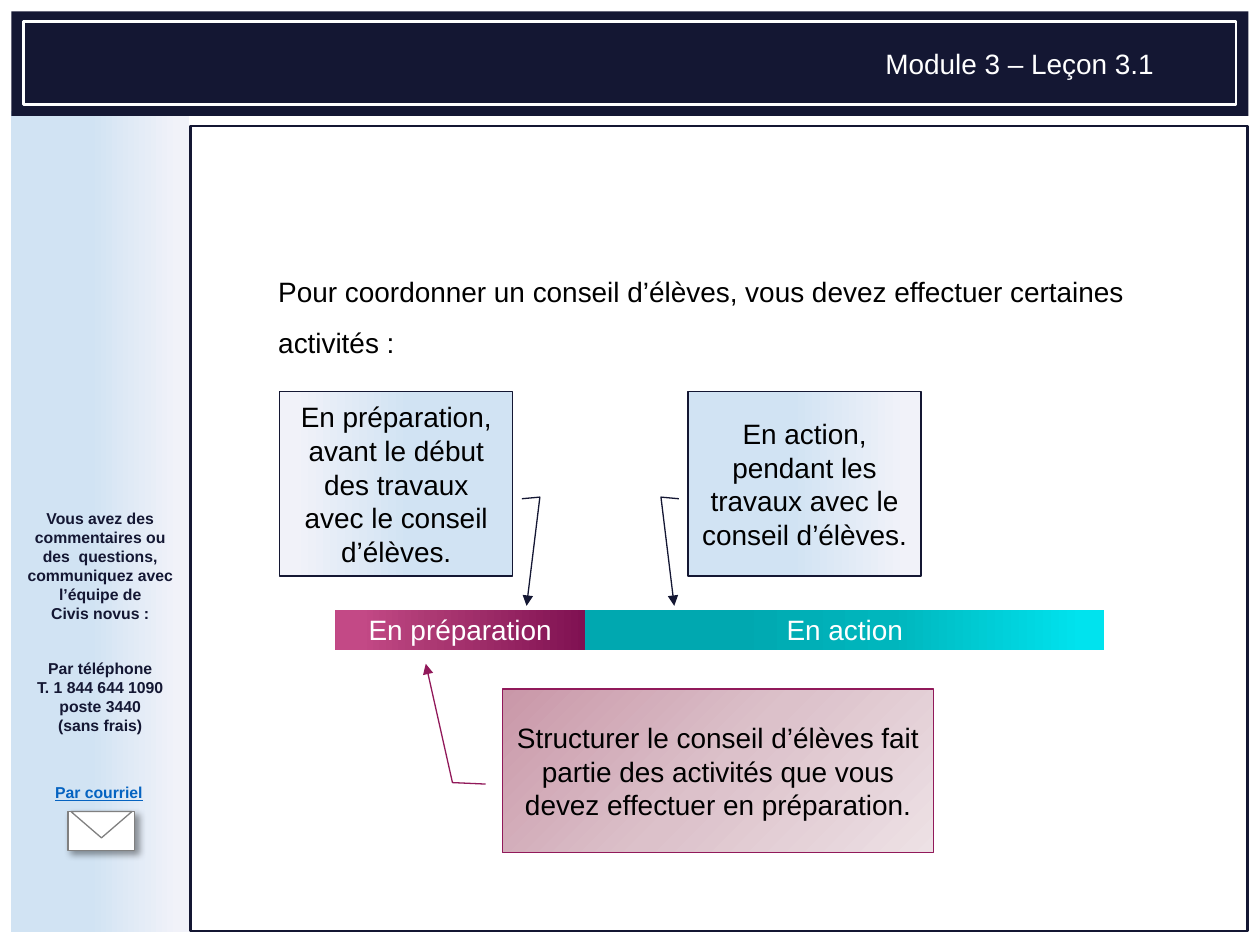
from collections import namedtuple

from lxml.etree import SubElement
from pptx import Presentation
from pptx.dml.color import RGBColor
from pptx.enum.shapes import MSO_SHAPE
from pptx.enum.text import MSO_ANCHOR, PP_ALIGN
from pptx.oxml.ns import qn
from pptx.util import Cm, Pt

NAVY = RGBColor(0x14, 0x17, 0x33)
WHITE = RGBColor(0xFF, 0xFF, 0xFF)
BLACK = RGBColor(0x00, 0x00, 0x00)
GRAY = RGBColor(0x80, 0x80, 0x80)
PLUM = RGBColor(0x91, 0x19, 0x5A)
LINK_BLUE = RGBColor(0x05, 0x63, 0xC1)

# Gradients: (angle counter-clockwise, [(position in percent, colour), ...])
PALE_BLUE = (180, [(6, RGBColor(0xF1, 0xF2, 0xF9)),
                   (56, RGBColor(0xD1, 0xE3, 0xF3)),
                   (99, RGBColor(0xCE, 0xE1, 0xF2))])
PALE_PINK = (315, [(0, RGBColor(0xC9, 0x97, 0xA8)),
                   (50, RGBColor(0xDC, 0xC1, 0xCA)),
                   (100, RGBColor(0xED, 0xE1, 0xE5))])
MAGENTA = (180, [(0, RGBColor(0x80, 0x11, 0x52)),
                 (62, RGBColor(0xAC, 0x39, 0x73)),
                 (90, RGBColor(0xC3, 0x49, 0x86))])
TURQUOISE = (180, [(4, RGBColor(0x00, 0xE3, 0xEE)),
                   (41, RGBColor(0x00, 0xB6, 0xBD)),
                   (72, RGBColor(0x00, 0xA8, 0xB0))])

POINT_DOWN = (1.163, -0.059)
POINT_UP = (-0.154, -0.178)

Box = namedtuple("Box", "left top width height")  # centimetres


def in_cm(box):
    return [Cm(length) for length in box]


def fill_gradient(shape, gradient):
    angle, stops = gradient
    shape.fill.gradient()
    shape.fill.gradient_angle = angle
    stop_list = shape._element.spPr.find(".//" + qn("a:gsLst"))
    for old_stop in list(stop_list):
        stop_list.remove(old_stop)
    for position, color in stops:
        stop = SubElement(stop_list, qn("a:gs"), pos=str(position * 1000))
        SubElement(stop, qn("a:srgbClr"), val=str(color))


def add_block(shapes, kind, box, fill=None, line=None, line_width=0.75):
    """Add a preset shape; fill is a colour, a gradient or None."""
    shape = shapes.add_shape(kind, *in_cm(box))
    shape.shadow.inherit = False
    if fill is None:
        shape.fill.background()
    elif isinstance(fill, RGBColor):
        shape.fill.solid()
        shape.fill.fore_color.rgb = fill
    else:
        fill_gradient(shape, fill)
    if line is None:
        shape.line.fill.background()
    else:
        shape.line.color.rgb = line
        shape.line.width = Pt(line_width)
    return shape


def write(shape, paragraphs, size, color, align=PP_ALIGN.CENTER, bold=False):
    frame = shape.text_frame
    frame.word_wrap = True
    for index, text in enumerate(paragraphs):
        para = frame.add_paragraph() if index else frame.paragraphs[0]
        para.text = text
        para.alignment = align
        para.font.name = "Arial"
        para.font.size = Pt(size)
        para.font.bold = bold
        para.font.color.rgb = color
    return frame


def add_banner(page, box):
    add_block(page.shapes, MSO_SHAPE.RECTANGLE, box, NAVY)
    inner = Box(box.left + 0.25, box.top + 0.2, box.width - 0.5, box.height - 0.43)
    add_block(page.shapes, MSO_SHAPE.RECTANGLE, inner, None, WHITE, 1.5)
    label = Box(box.left + 17.25, box.top + 0.58, 6.15, 0.94)
    write(page.shapes.add_textbox(*in_cm(label)), ["Module 3 – Leçon 3.1"], 16, WHITE)


def add_envelope(page, box):
    group = page.shapes.add_group_shape()
    body = add_block(group.shapes, MSO_SHAPE.RECTANGLE, box, WHITE, GRAY)
    effects = body._element.spPr.find(qn("a:effectLst"))
    shadow = SubElement(effects, qn("a:outerShdw"), blurRad=str(Pt(4)),
                        dist=str(Pt(3)), dir="2700000", algn="tl", rotWithShape="0")
    color = SubElement(shadow, qn("a:srgbClr"), val=str(BLACK))
    SubElement(color, qn("a:alpha"), val="40000")
    flap_box = Box(box.left + 0.06, box.top, box.width - 0.12, 0.53)
    flap = add_block(group.shapes, MSO_SHAPE.ISOSCELES_TRIANGLE, flap_box, WHITE, GRAY)
    flap.rotation = 180


def add_sidebar(page, box):
    add_block(page.shapes, MSO_SHAPE.RECTANGLE, box, PALE_BLUE)
    contact = page.shapes.add_textbox(
        *in_cm(Box(box.left, box.top + 7.89, box.width, 4.88)))
    frame = write(contact, [
        "Vous avez des commentaires ou des  questions, communiquez avec "
        "l’équipe de\vCivis novus :",
        "Par téléphone\vT. 1 844 644 1090\vposte 3440\v(sans frais)",
    ], 9, NAVY, bold=True)
    frame.paragraphs[1].space_before = Pt(20.7)

    mail = page.shapes.add_textbox(
        *in_cm(Box(box.left + 0.63, box.top + 13.41, 2.29, 0.64)))
    frame = write(mail, ["Par courriel"], 9, LINK_BLUE, PP_ALIGN.LEFT, True)
    frame.word_wrap = False
    frame.paragraphs[0].font.underline = True
    add_envelope(page, Box(box.left + 1.14, box.top + 14.12, 1.35, 0.79))


def add_callout(page, box, text, fill, line, target, mirrored=False):
    """Add a boxed text whose bent arrow ends at target (y, x as shares of the box)."""
    callout = add_block(page.shapes, MSO_SHAPE.LINE_CALLOUT_2, box, fill, line)
    for index, value in enumerate((0.581, -0.039, 0.572, -0.116) + target):
        callout.adjustments[index] = value
    outline = callout._element.spPr.find(qn("a:ln"))
    SubElement(outline, qn("a:tailEnd"), type="triangle")
    if mirrored:
        callout._element.spPr.find(qn("a:xfrm")).set("flipH", "1")
    write(callout, [text], 16, BLACK).vertical_anchor = MSO_ANCHOR.MIDDLE


def add_timeline(page, box):
    group = page.shapes.add_group_shape()
    left = box.left
    for text, share, fill in (("En préparation", 0.325, MAGENTA),
                              ("En action", 0.675, TURQUOISE)):
        width = box.width * share
        phase = add_block(group.shapes, MSO_SHAPE.RECTANGLE,
                          Box(left, box.top, width, box.height), fill)
        write(phase, [text], 16, WHITE).vertical_anchor = MSO_ANCHOR.MIDDLE
        left += width


def add_lesson(page, box):
    add_block(page.shapes, MSO_SHAPE.RECTANGLE, box, None, NAVY, 1.5)
    title = page.shapes.add_textbox(
        *in_cm(Box(box.left + 1.52, box.top + 2.54, 18.26, 2.26)))
    frame = write(title, ["Pour coordonner un conseil d’élèves, vous devez effectuer "
                          "certaines activités\u00a0:"], 16, BLACK, PP_ALIGN.LEFT)
    frame.paragraphs[0].line_spacing = 1.5

    add_callout(page, Box(box.left + 6.29, box.top + 11.35, 8.69, 3.3),
                "Structurer le conseil d’élèves fait partie des activités que vous "
                "devez effectuer en préparation.", PALE_PINK, PLUM, POINT_UP)
    add_timeline(page, Box(box.left + 2.92, box.top + 9.75, 15.5, 0.81))
    for offset, text, mirrored in (
            (1.8, "En préparation, avant le début des travaux avec le conseil "
                  "d’élèves.", True),
            (10.03, "En action, pendant les travaux avec le conseil d’élèves.", False)):
        add_callout(page, Box(box.left + offset, box.top + 5.36, 4.7, 3.71),
                    text, PALE_BLUE, NAVY, POINT_DOWN, mirrored)


def main():
    deck = Presentation()
    deck.slide_width, deck.slide_height = Cm(25.4), Cm(19.05)
    page = deck.slides.add_slide(deck.slide_layouts[6])
    add_sidebar(page, Box(0.23, 2.24, 3.58, 16.54))
    add_banner(page, Box(0.23, 0.23, 24.94, 2.11))
    add_lesson(page, Box(3.84, 2.54, 21.31, 16.23))
    deck.save("out.pptx")


if __name__ == "__main__":
    main()
